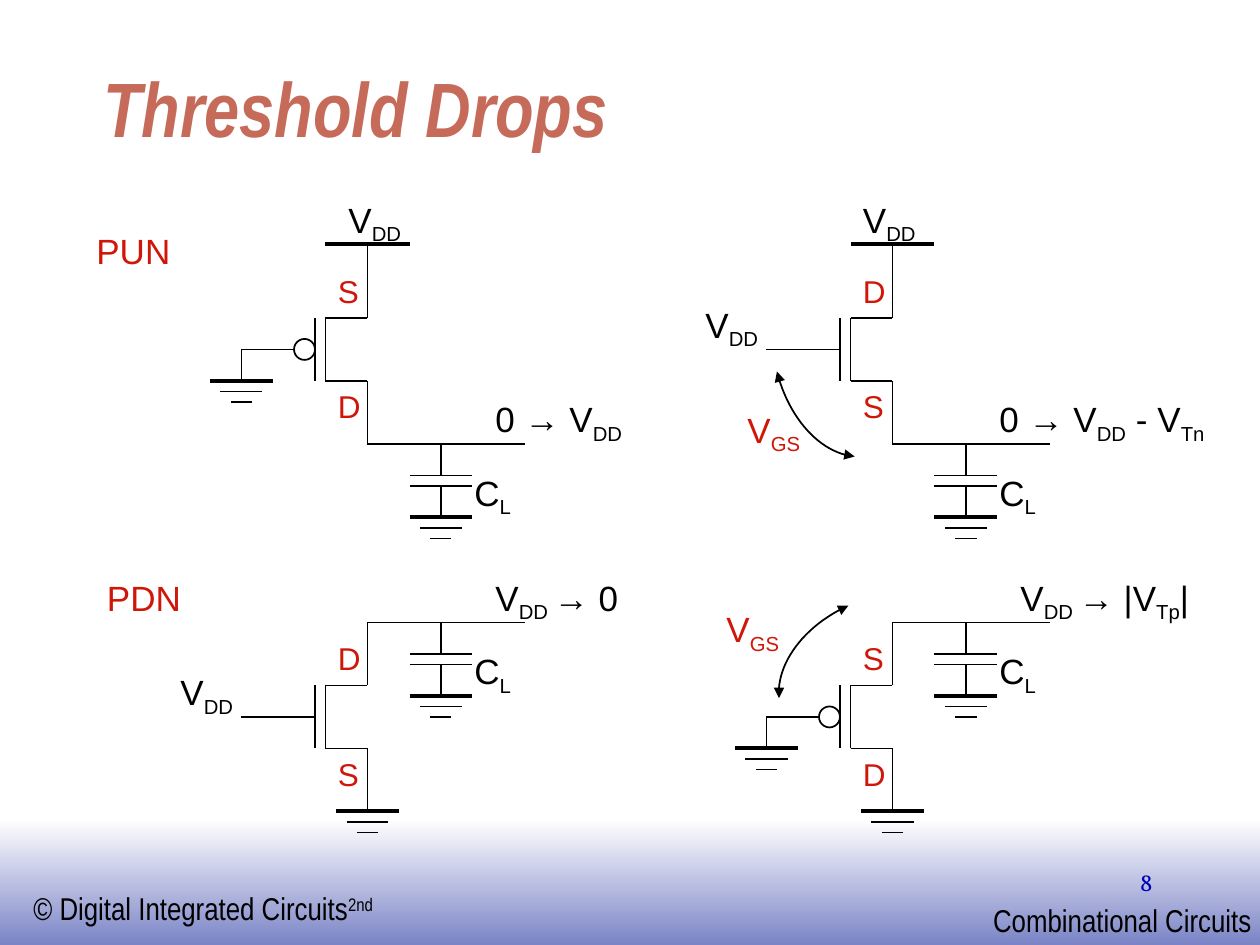
from dataclasses import dataclass

from lxml import etree
from pptx import Presentation
from pptx import util as u
from pptx.dml.color import RGBColor
from pptx.enum import shapes, text
from pptx.oxml import ns

STEP = 1 / 12
BLACK, RED = "000000", "D01608"


@dataclass
class Box:
    left: float
    top: float

    def at(self, column, row):
        return u.Inches(self.left + column * STEP), u.Inches(self.top + row * STEP)


def colour(value):
    return RGBColor.from_string(value)


def add_text(slide, words, position, width, height=0.43, size=20, font="Arial", color=BLACK,
             bold=False, italic=False, align=text.PP_ALIGN.LEFT,
             anchor=text.MSO_ANCHOR.TOP, wrap=False, shift=-25):
    shape = slide.shapes.add_textbox(*position, u.Inches(width), u.Inches(height))
    frame = shape.text_frame
    frame.word_wrap = wrap
    frame.auto_size = text.MSO_AUTO_SIZE.NONE if wrap else text.MSO_AUTO_SIZE.SHAPE_TO_FIT_TEXT
    frame.vertical_anchor = anchor
    paragraph = frame.paragraphs[0]
    paragraph.alignment = align
    for index, piece in enumerate(words.split("~")):
        if not piece:
            continue
        run = paragraph.add_run()
        run.text = piece
        run.font.size = u.Pt(size)
        run.font.name = font
        run.font.bold = bold
        run.font.italic = italic
        run.font.color.rgb = colour(color)
        if index % 2:
            run._r.get_or_add_rPr().set("baseline", str(shift * 1000))


def add_wire(slide, box, start, end, width=1):
    wire = slide.shapes.add_connector(shapes.MSO_CONNECTOR.STRAIGHT, *box.at(*start), *box.at(*end))
    wire.line.width = u.Pt(width)
    wire.line.color.rgb = colour(BLACK)
    etree.SubElement(wire._element.spPr, ns.qn("a:effectLst"))


def add_ground(slide, box, column, row):
    for index, half in enumerate((3, 2, 1)):
        add_wire(slide, box, (column - half, row + index), (column + half, row + index),
                 1 if index else 2.25)


def add_load(slide, box, row, words, column, width):
    add_wire(slide, box, (15, row), (30, row))
    add_wire(slide, box, (22, row), (22, row + 3))
    for plate in (row + 3, row + 4):
        add_wire(slide, box, (19, plate), (25, plate))
    add_wire(slide, box, (22, row + 4), (22, row + 7))
    add_ground(slide, box, 22, row + 7)
    add_text(slide, "C~L", box.at(24, row + 2), 0.5)
    add_text(slide, words, box.at(column, row - 5), width)


def add_transistor(slide, box, row, p_type):
    for side in (row, row + 6):
        add_wire(slide, box, (11, side), (15, side))
    for plate in (10, 11):
        add_wire(slide, box, (plate, row), (plate, row + 6))
    gate = row + 3
    add_wire(slide, box, (3, gate), (8 if p_type else 10, gate))
    if p_type:
        size = u.Inches(2 * STEP)
        bubble = slide.shapes.add_shape(shapes.MSO_SHAPE.OVAL, *box.at(8, gate - 1), size, size)
        bubble.shadow.inherit = False
        bubble.fill.background()
        bubble.line.width = u.Pt(1)
        bubble.line.color.rgb = colour(BLACK)
        add_wire(slide, box, (3, gate), (3, gate + 3))
        add_ground(slide, box, 3, gate + 3)
    else:
        add_text(slide, "V~DD", box.at(-4, gate - 5), 0.65)
    for letter, label_row in zip("SD" if p_type else "DS", (row - 5, row + 6)):
        add_text(slide, letter, box.at(11, label_row), 0.38, 0.4, size=18, color=RED)


def add_pull_up(slide, box, p_type, supply_column, words, column, width):
    add_wire(slide, box, (11, 0), (19, 0), 2.25)
    add_text(slide, "V~DD", box.at(supply_column, -5), 0.65)
    add_wire(slide, box, (15, 0), (15, 7))
    add_transistor(slide, box, 7, p_type)
    add_wire(slide, box, (15, 13), (15, 19))
    add_load(slide, box, 19, words, column, width)


def add_pull_down(slide, box, p_type, words, column, width):
    add_load(slide, box, 0, words, column, width)
    add_wire(slide, box, (15, 0), (15, 6))
    add_transistor(slide, box, 6, p_type)
    add_wire(slide, box, (15, 12), (15, 18))
    add_ground(slide, box, 15, 18)


def add_gate_voltage(slide, box, label, controls, segments=24):
    add_text(slide, "V~GS", box.at(*label), 0.65, color=RED)
    points = []
    for index in range(segments + 1):
        t = index / segments
        weights = ((1 - t) ** 3, 3 * t * (1 - t) ** 2, 3 * t * t * (1 - t), t ** 3)
        points.append(box.at(*(sum(w * c for w, c in zip(weights, axis)) for axis in zip(*controls))))
    builder = slide.shapes.build_freeform(*points[0])
    builder.add_line_segments(points[1:], close=False)
    arc = builder.convert_to_shape()
    arc.shadow.inherit = False
    arc.fill.background()
    arc.line.width = u.Pt(1)
    arc.line.color.rgb = colour(BLACK)
    line = arc.line._get_or_add_ln()
    for tag in ("a:headEnd", "a:tailEnd"):
        etree.SubElement(line, ns.qn(tag), type="triangle")


def add_footer(slide, box):
    band = slide.shapes.add_shape(shapes.MSO_SHAPE.RECTANGLE, *box.at(0, 0), u.Inches(10), u.Inches(1))
    band.shadow.inherit = False
    band.line.fill.background()
    band.fill.gradient()
    band.fill.gradient_angle = 270
    for stop, position, value in zip(band.fill.gradient_stops, (0, 1), ("FFFFFF", "7B84C6")):
        stop.position = position
        stop.color.rgb = colour(value)
    add_text(slide, "© Digital Integrated Circuits~2nd", box.at(2, 6.1), 2.93, 0.4,
             size=18, font="Arial Narrow", shift=30)
    add_text(slide, "Combinational Circuits", box.at(93.4, 7.2), 2.25, 0.4,
             size=18, font="Arial Narrow")
    add_text(slide, "8", box.at(86, 4), 2.08, 0.5, size=14, font="Vollkorn", color="0000B6",
             align=text.PP_ALIGN.RIGHT, wrap=True)


def main():
    presentation = Presentation()
    presentation.slide_width, presentation.slide_height = u.Inches(10), u.Inches(7.5)
    slide = presentation.slides.add_slide(presentation.slide_layouts[6])
    add_footer(slide, Box(0, 6.5))
    add_text(slide, "Threshold Drops", (u.Inches(0.72), u.Inches(0.48)), 8.5, 0.78, size=44,
             font="Arial Narrow", color="C66B5A", bold=True, italic=True,
             anchor=text.MSO_ANCHOR.BOTTOM, wrap=True)

    left, right = 20 * STEP, 70 * STEP
    upper, lower = 1.94, 4.94
    add_text(slide, "PUN", Box(left, upper).at(-12, -2), 0.79, color=RED)
    add_text(slide, "PDN", Box(left, lower).at(-11, -5), 0.79, color=RED)
    add_pull_up(slide, Box(left, upper), True, 12, "0 → V~DD", 26, 1.23)
    add_pull_up(slide, Box(right, upper), False, 11, "0 → V~DD~ - V~Tn", 24, 1.87)
    add_pull_down(slide, Box(left, lower), False, "V~DD ~→ 0", 26, 1.23)
    add_pull_down(slide, Box(right, lower), True, "V~DD ~→ |V~Tp~|", 26, 1.62)
    add_gate_voltage(slide, Box(right, upper), (0, 15),
                     ((4, 12.1), (5.1, 16.5), (8.1, 19.9), (11.4, 20.2)))
    add_gate_voltage(slide, Box(right, lower), (-2, -2),
                     ((10.8, -1.6), (6.6, 0.3), (3.9, 3.9), (4.2, 7.2)))
    presentation.save("out.pptx")


if __name__ == "__main__":
    main()
